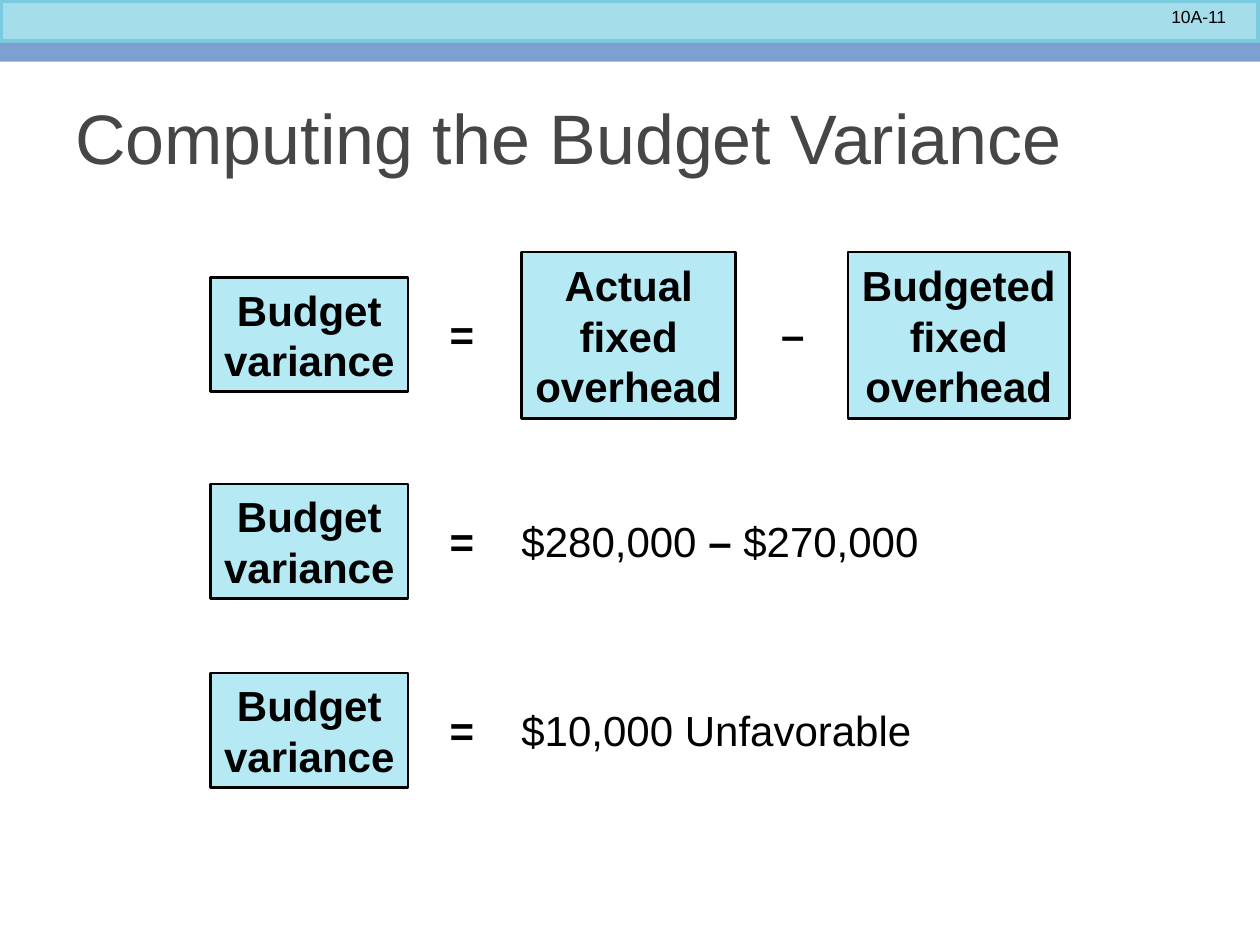
from pptx import Presentation
from pptx.dml.color import RGBColor
from pptx.enum.shapes import MSO_SHAPE
from pptx.enum.text import MSO_ANCHOR as Anchor, MSO_AUTO_SIZE as AutoSize, PP_ALIGN as Align
from pptx.oxml.ns import qn
from pptx.util import Inches, Pt
from lxml.etree import SubElement

FONT = "Arial"
BLACK = RGBColor(0, 0, 0)
TITLE_GRAY = RGBColor(0x46, 0x46, 0x46)
BANNER_FILL = RGBColor(0xA6, 0xDD, 0xEA)
BANNER_EDGE = RGBColor(0x7A, 0xCB, 0xE0)
STRIPE_BLUE = RGBColor(0x7D, 0xA0, 0xD0)
BOX_FILL = RGBColor(0xB5, 0xE9, 0xF4)

TERM_LEFT, TERM_WIDTH, TERM_HEIGHT = 1.67, 1.57, 0.91
FACTOR_TOP, FACTOR_HEIGHT = 2, 1.32
SIGN_LEFT, SIGN_OFFSET = 3.47, 0.2
AMOUNT_TAB = 0.57


def write(sp, text, size=24, color=BLACK, bold=False, align=Align.LEFT,
          anchor=Anchor.TOP, wrap=False, grow=True):
    tf = sp.text_frame
    tf.word_wrap = wrap
    tf.auto_size = AutoSize.SHAPE_TO_FIT_TEXT if grow else AutoSize.NONE
    tf.vertical_anchor = anchor
    p = tf.paragraphs[0]
    p.alignment = align
    runs = [(text, bold)] if isinstance(text, str) else text
    for content, weight in runs:
        for i, line in enumerate(content.split("\n")):
            if i:
                p.add_line_break()
            r = p.add_run()
            r.text = line
            r.font.name = FONT
            r.font.size = Pt(size)
            r.font.bold = weight
            r.font.color.rgb = color
    return p


def add_rect(s, left, top, width, height, fill, line=None, line_width=1.5):
    sp = s.shapes.add_shape(MSO_SHAPE.RECTANGLE, Inches(left), Inches(top),
                            Inches(width), Inches(height))
    sp.shadow.inherit = False
    sp.fill.solid()
    sp.fill.fore_color.rgb = fill
    if line is None:
        sp.line.fill.background()
    else:
        sp.line.color.rgb = line
        sp.line.width = Pt(line_width)
    return sp


def add_box(s, text, left, top, width, height):
    sp = add_rect(s, left, top, width, height, BOX_FILL, BLACK)
    write(sp, text, bold=True, align=Align.CENTER, anchor=Anchor.MIDDLE)


def add_text(s, text, left, top, width, height, **fmt):
    sp = s.shapes.add_textbox(Inches(left), Inches(top), Inches(width), Inches(height))
    return write(sp, text, **fmt)


def set_tab(p, position):
    tabs = SubElement(p._p.get_or_add_pPr(), qn("a:tabLst"))
    SubElement(tabs, qn("a:tab"), pos=str(Inches(position)), algn="l")


def add_header(s):
    add_rect(s, 0, 0, 10, 0.34, BANNER_FILL, BANNER_EDGE, 4)
    add_rect(s, 0, 0.4, 10, 0.09, STRIPE_BLUE)
    add_rect(s, 0, 0.34, 10, 0.1, STRIPE_BLUE)
    add_text(s, "10A-11", 8.5, 0, 1.33, 0.27, size=10, align=Align.RIGHT, wrap=True)
    add_text(s, "Computing the Budget Variance", 0.5, 0.5, 9, 1.17, size=40,
             color=TITLE_GRAY, anchor=Anchor.MIDDLE, wrap=True, grow=False)


def add_equation(s, top, right_side, width):
    add_box(s, "Budget\nvariance", TERM_LEFT, top, TERM_WIDTH, TERM_HEIGHT)
    p = add_text(s, [("=", True)] + right_side, SIGN_LEFT, top + SIGN_OFFSET, width, 0.5)
    if right_side:
        set_tab(p, AMOUNT_TAB)


def main():
    prs = Presentation()
    prs.slide_width, prs.slide_height = Inches(10), Inches(7.5)
    s = prs.slides.add_slide(prs.slide_layouts[6])
    add_header(s)
    add_equation(s, 2.2, [], 0.4)
    add_box(s, "Actual\nfixed\noverhead", 4.14, FACTOR_TOP, 1.7, FACTOR_HEIGHT)
    add_text(s, "–", 6.1, 2.2 + SIGN_OFFSET, 0.39, 0.5, bold=True)
    add_box(s, "Budgeted\nfixed\noverhead", 6.73, FACTOR_TOP, 1.76, FACTOR_HEIGHT)
    add_equation(s, 3.84, [("\t$280,000 ", False), ("–", True), (" $270,000", False)], 4.05)
    add_equation(s, 5.34, [("\t$10,000 Unfavorable", False)], 3.9)
    prs.save("out.pptx")


if __name__ == "__main__":
    main()
